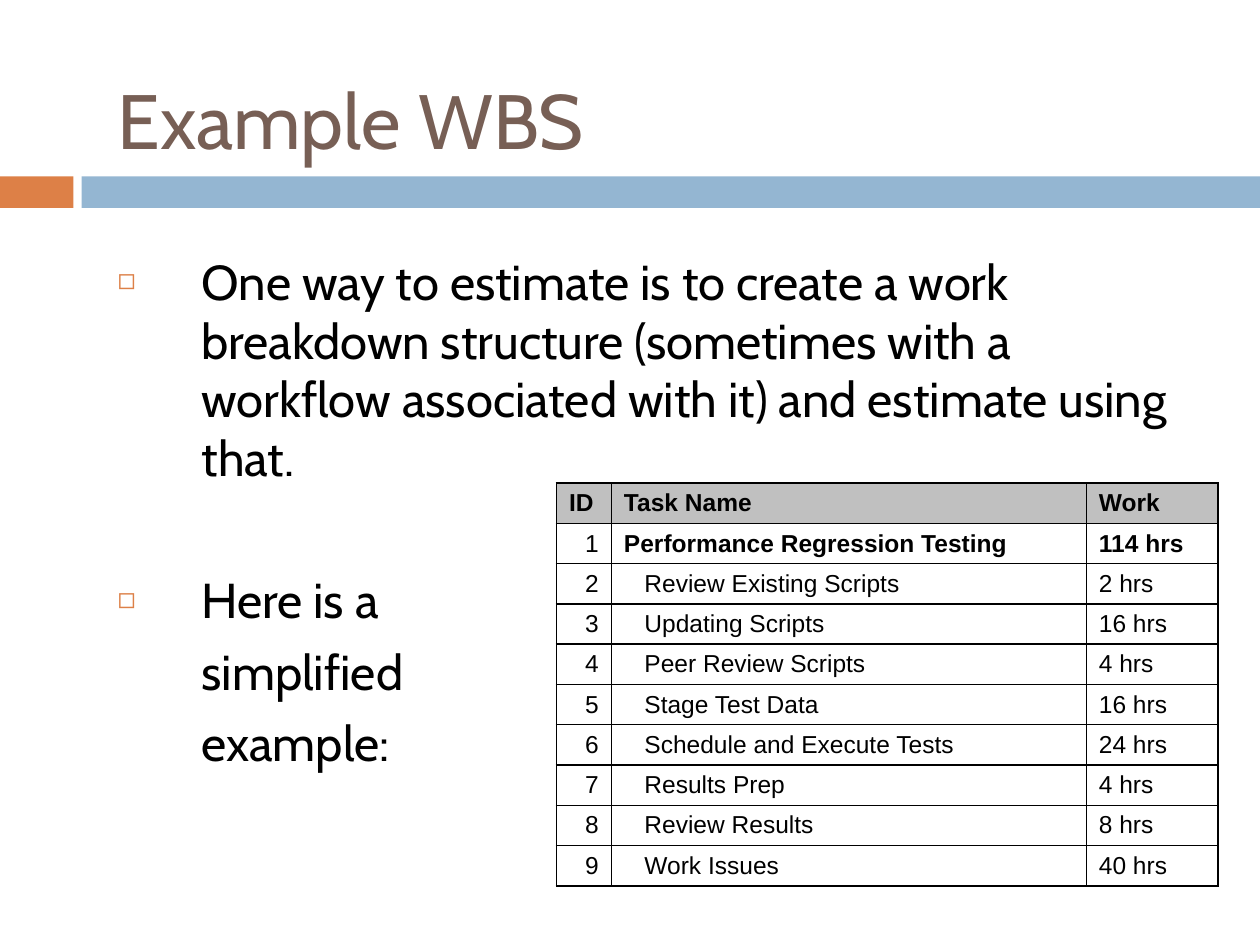
import pptx
import pptx.dml.color
import pptx.enum.shapes
import pptx.enum.text
import pptx.oxml
import pptx.oxml.ns
import pptx.util
from lxml import etree

Pt = pptx.util.Pt
RGBColor = pptx.dml.color.RGBColor
Align = pptx.enum.text.PP_ALIGN
Anchor = pptx.enum.text.MSO_ANCHOR
qn = pptx.oxml.ns.qn

ORANGE = RGBColor(0xDD, 0x80, 0x47)
BLUE = RGBColor(0x94, 0xB6, 0xD2)
BROWN = RGBColor(0x77, 0x5F, 0x55)
BLACK = RGBColor(0, 0, 0)
GRAY = RGBColor(0xC0, 0xC0, 0xC0)

HEADING_FONT = "Cabin"
TABLE_FONT = "Arial"
HANGING = 48
SUBTASK_INDENT = 11.7

# Text, has a bullet, space before in points
POINTS = [
    ("One way to estimate is to create a work breakdown structure (sometimes "
     "with a workflow associated with it) and estimate using that.", True, 0),
    ("Here is a", True, 47.6),
    ("simplified", False, 7),
    ("example:", False, 7),
]
HEADER = ("ID", "Task Name", "Work")
TASKS = [
    ("Performance Regression Testing", "114 hrs"),
    ("Review Existing Scripts", "2 hrs"),
    ("Updating Scripts", "16 hrs"),
    ("Peer Review Scripts", "4 hrs"),
    ("Stage Test Data", "16 hrs"),
    ("Schedule and Execute Tests", "24 hrs"),
    ("Results Prep", "4 hrs"),
    ("Review Results", "8 hrs"),
    ("Work Issues", "40 hrs"),
]


def place(shape, box):
    shape.left, shape.top, shape.width, shape.height = map(Pt, box)


def add_span(para, text, font, size, color, bold=False):
    span = para.add_run()
    span.text = text
    span.font.name = font
    span.font.size = Pt(size)
    span.font.bold = bold
    span.font.color.rgb = color


def add_title(page, box):
    title = page.shapes.title
    place(title, box)
    frame = title.text_frame
    frame.auto_size = pptx.enum.text.MSO_AUTO_SIZE.NONE
    frame.vertical_anchor = Anchor.MIDDLE
    para = frame.paragraphs[0]
    para.alignment = Align.LEFT
    add_span(para, "Example WBS", HEADING_FONT, 44, BROWN)


def add_band(page, box):
    """A short orange bar, a gap, then a blue bar to the right edge."""
    left, top, width, height = box
    short, start = 42, 46.6
    for x, bar_width, color in ((left, short, ORANGE),
                                (left + start, width - start, BLUE)):
        bar = page.shapes.add_shape(
            pptx.enum.shapes.MSO_SHAPE.RECTANGLE,
            Pt(x), Pt(top), Pt(bar_width), Pt(height))
        bar.shadow.inherit = False
        bar.fill.solid()
        bar.fill.fore_color.rgb = color
        bar.line.fill.background()


def set_bullet(para, bulleted):
    properties = para._p.get_or_add_pPr()
    properties.set("marL", str(Pt(HANGING)))
    properties.set("indent", str(Pt(-HANGING) if bulleted else 0))
    if not bulleted:
        etree.SubElement(properties, qn("a:buNone"))
        return
    color = etree.SubElement(properties, qn("a:buClr"))
    etree.SubElement(color, qn("a:srgbClr"), val=str(ORANGE))
    etree.SubElement(properties, qn("a:buSzPct"), val="60000")
    etree.SubElement(properties, qn("a:buChar"), char="◻")


def add_points(page, box):
    body = page.placeholders[1]
    place(body, box)
    frame = body.text_frame
    frame.auto_size = pptx.enum.text.MSO_AUTO_SIZE.NONE
    for index, (text, bulleted, before) in enumerate(POINTS):
        para = frame.add_paragraph() if index else frame.paragraphs[0]
        set_bullet(para, bulleted)
        para.space_before = Pt(before)
        add_span(para, text, HEADING_FONT, 28, BLACK)


def add_borders(cell):
    properties = cell._tc.get_or_add_tcPr()
    for side in ("a:lnL", "a:lnR", "a:lnT", "a:lnB"):
        line = etree.SubElement(properties, qn(side), w=str(Pt(1)))
        fill = etree.SubElement(line, qn("a:solidFill"))
        etree.SubElement(fill, qn("a:srgbClr"), val=str(BLACK))


def fill_cell(cell, text, bold, header, align, indent):
    cell.vertical_anchor = Anchor.BOTTOM
    cell.margin_left = Pt(7.2 + indent)
    cell.margin_top = Pt(2)
    add_borders(cell)
    if header:
        cell.fill.solid()
        cell.fill.fore_color.rgb = GRAY
    else:
        cell.fill.background()
    para = cell.text_frame.paragraphs[0]
    para.alignment = align
    add_span(para, text, TABLE_FONT, 14, BLACK, bold)


def add_task_table(page, box):
    left, top, width, height = box
    rows = [HEADER] + [(str(number), name, work)
                       for number, (name, work) in enumerate(TASKS, 1)]
    table = page.shapes.add_table(
        len(rows), len(HEADER), Pt(left), Pt(top), Pt(width), Pt(height)).table
    table.first_row = table.horz_banding = False
    id_width, work_width = 31.4, 75.2
    widths = (id_width, width - id_width - work_width, work_width)
    for column, column_width in zip(table.columns, widths):
        column.width = Pt(column_width)
    for row_index, texts in enumerate(rows):
        table.rows[row_index].height = Pt(height / len(rows))
        header = row_index == 0
        for column_index, text in enumerate(texts):
            is_id = column_index == 0
            # The header and the summary task are bold; subtasks are indented
            bold = header or (row_index == 1 and not is_id)
            subtask = row_index > 1 and column_index == 1
            fill_cell(table.cell(row_index, column_index), text, bold, header,
                      Align.RIGHT if is_id and not header else Align.LEFT,
                      SUBTASK_INDENT if subtask else 0)


def main():
    deck = pptx.Presentation()
    deck.slide_width, deck.slide_height = Pt(720), Pt(540)
    page = deck.slides.add_slide(deck.slide_layouts[1])
    add_band(page, (0, 100.8, 720, 18))
    add_title(page, (60, 26, 606, 84))
    add_points(page, (60, 140, 624, 374))
    add_task_table(page, (318, 276, 378, 230.4))
    deck.save("out.pptx")


if __name__ == "__main__":
    main()
